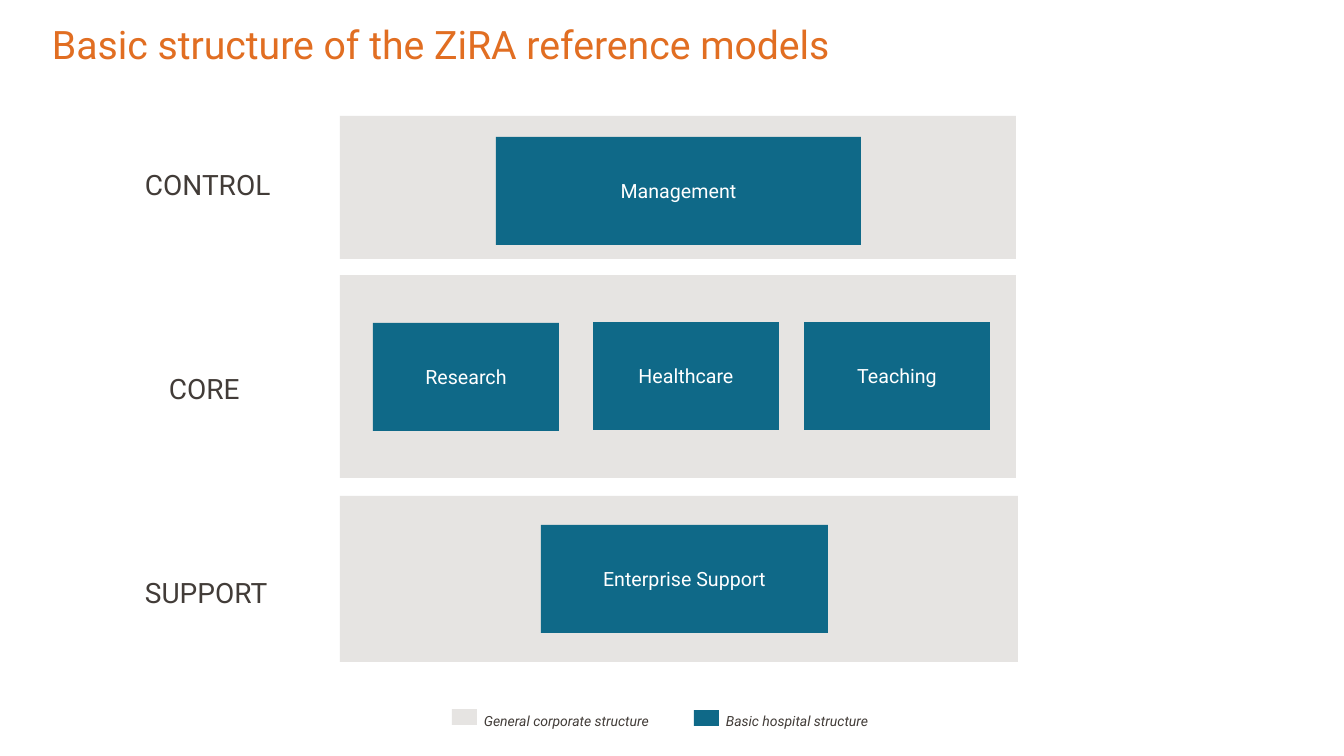
from pptx import Presentation
from pptx.dml.color import RGBColor
from pptx.enum import shapes, text

GREY, TEAL, DARK, WHITE, ORANGE = "E6E4E2", "0F6988", "423C38", "FFFFFF", "E16E22"
FONT = "Roboto"
TITLE = "Basic structure of the ZiRA reference models"
BANDS = [
    ("CONTROL", (135, 163, 160), (340, 116, 676, 143),
     [("Management", 496, 137, 365)]),
    ("CORE", (159, 367, 137), (340, 275, 676, 203),
     [("Research", 373, 323, 186), ("Healthcare", 593, 322, 186), ("Teaching", 804, 322, 186)]),
    ("SUPPORT", (135, 571, 170), (340, 496, 678, 166),
     [("Enterprise Support", 541, 525, 287)]),
]
BOX_H, LABEL_H = 108, 44
KEYS = [
    ("General corporate structure", GREY, (452, 709), (474, 199)),
    ("Basic hospital structure", TEAL, (694, 710), (716, 278)),
]
KEY_W, KEY_H, KEY_TOP, NOTE_H = 25, 16, 703, 31


def px(n):
    return round(n * 914400 / 100.8)


def color(code):
    return RGBColor.from_string(code)


def write(frame, words, size, code, italic=False):
    frame.text = words
    para = frame.paragraphs[0]
    font = para.runs[0].font
    font.name, font.size, font.italic = FONT, size * 12700, italic
    font.color.rgb = color(code)
    return para


def rect(x, y, w, h, code):
    shape = slide.shapes.add_shape(shapes.MSO_SHAPE.RECTANGLE, px(x), px(y), px(w), px(h))
    shape.shadow.inherit = False
    shape.fill.solid()
    shape.fill.fore_color.rgb = color(code)
    shape.line.fill.background()
    return shape


def label(x, y, w, h, words, size, italic=False):
    frame = slide.shapes.add_textbox(px(x), px(y), px(w), px(h)).text_frame
    frame.word_wrap = True
    return write(frame, words, size, DARK, italic)


deck = Presentation()
deck.slide_width, deck.slide_height = px(1344), px(756)
slide = deck.slides.add_slide(deck.slide_layouts[5])

title = slide.shapes.title
title.left, title.top, title.width, title.height = px(52), px(20), px(1179), px(54)
frame = title.text_frame
frame.margin_left = frame.margin_right = frame.margin_top = frame.margin_bottom = 0
frame.vertical_anchor = text.MSO_ANCHOR.MIDDLE
frame.word_wrap = True
head = write(frame, TITLE, 28, ORANGE)
head.alignment = text.PP_ALIGN.LEFT
head.line_spacing = 0.9

for name, (x, y, w), band, boxes in BANDS:
    rect(*band, GREY)
    for words, left, top, width in boxes:
        frame = rect(left, top, width, BOX_H, TEAL).text_frame
        frame.vertical_anchor = text.MSO_ANCHOR.MIDDLE
        write(frame, words, 14, WHITE).alignment = text.PP_ALIGN.CENTER
    label(x, y, w, LABEL_H, name, 20)

for words, code, (x, y), (left, width) in KEYS:
    rect(x, y, KEY_W, KEY_H, code)
    label(left, KEY_TOP, width, NOTE_H, words, 10, True).line_spacing = 1.26

deck.save("out.pptx")
